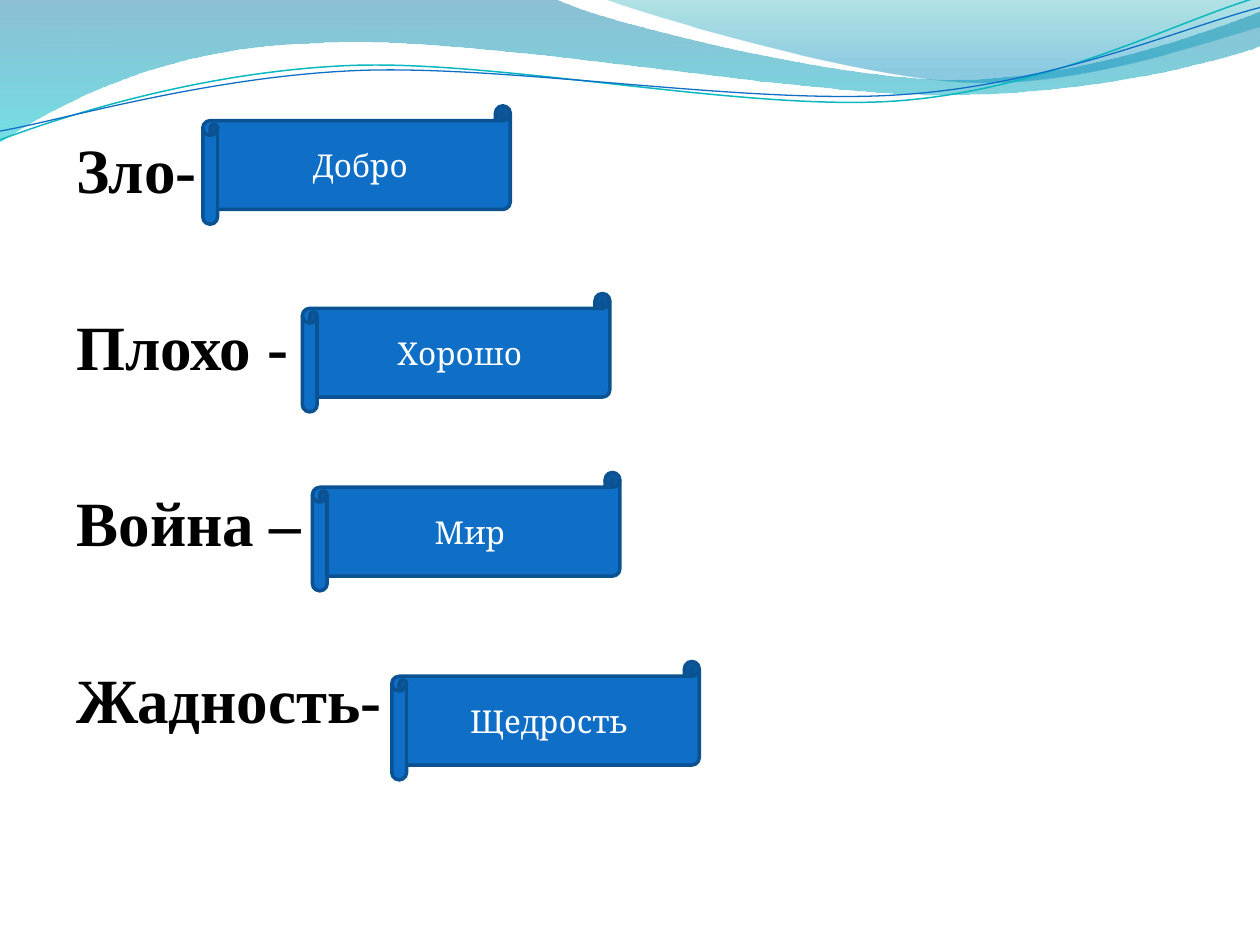
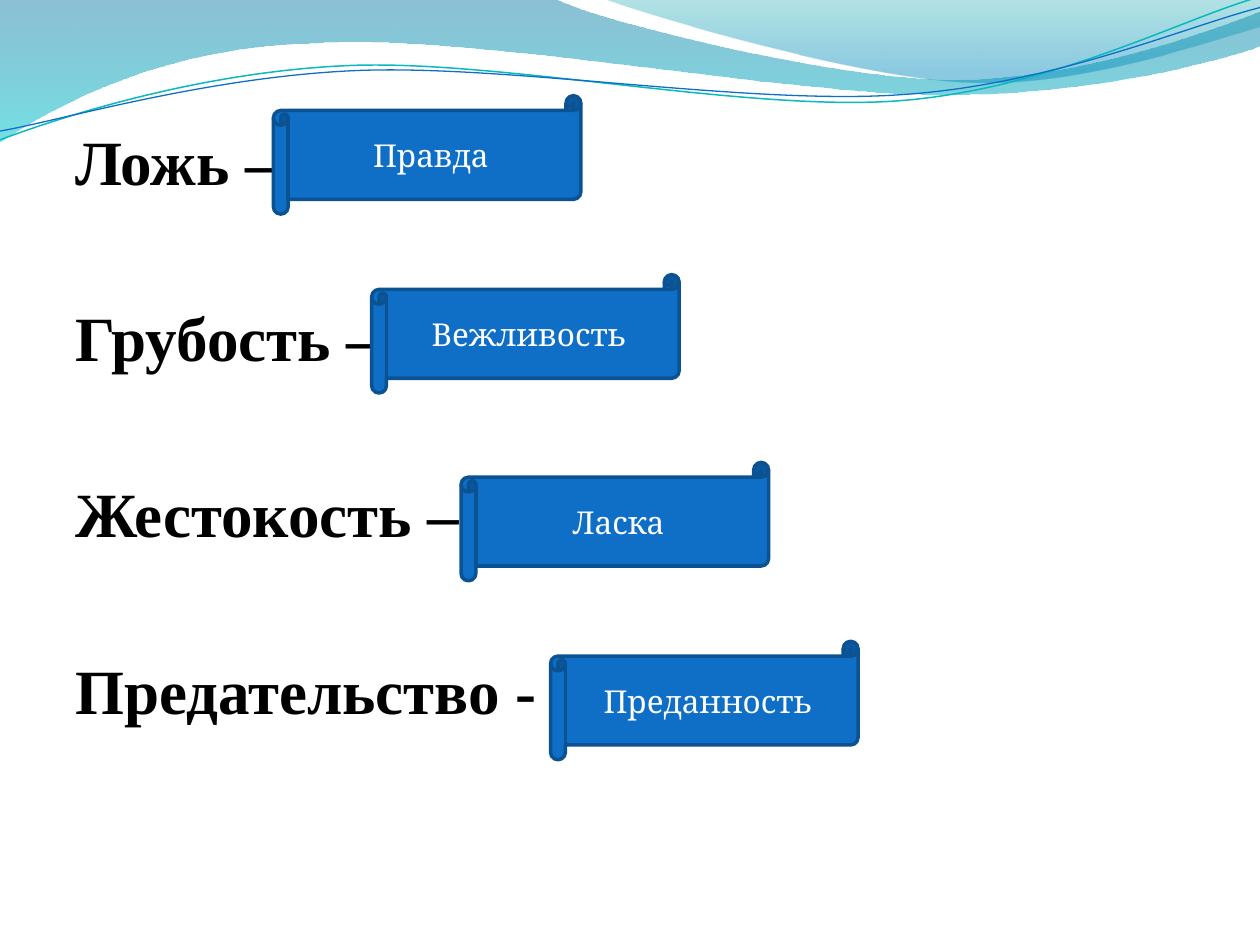
import math

from pptx import Presentation
from pptx import util as u
from pptx.dml.color import RGBColor
from pptx.enum import shapes, text
from pptx.oxml.ns import qn
from lxml import etree

BLUE = RGBColor(0x0F, 0x6F, 0xC6)
DARK_BLUE = RGBColor(0x0B, 0x52, 0x92)
TURQUOISE = RGBColor(0x0A, 0xB8, 0xBF)
WAVE_TOP = RGBColor(0x00, 0x74, 0xA1)
WAVE_BOTTOM = RGBColor(0x00, 0xC6, 0xCF)
CREST_TOP = RGBColor(0x00, 0xA1, 0xA9)
CREST_BOTTOM = RGBColor(0x00, 0x8B, 0xBF)
BLACK = RGBColor(0, 0, 0)
WHITE = RGBColor(255, 255, 255)

# The slide is a grid of square cells, 10 columns by 7.5 rows.
COLUMNS, ROWS = 10, 7.5
SCROLL_SIZE = (2.44, 0.94)
WORD_GAP = 57.6  # points between one word and the next
STRAND_TILT = -2.7  # degrees
STRAND_CENTER = (4.99, 0.58)

# Outlines: a start point, then lines (one point) and curves (three points).
WAVE = [(0, 0), [(4.4, -0.01)],
        [(4.76, 0.17), (6.64, 0.63), (7.58, 0.63)],
        [(8.53, 0.63), (9.58, 0.26), (10, 0.09)],
        [(10.01, 0.36)],
        [(9.83, 0.44), (8.7, 0.76), (7.46, 0.75)],
        [(6.22, 0.75), (3.82, 0.28), (2.57, 0.34)],
        [(1.29, 0.36), (0.46, 0.83), (-0.01, 1.13)]]
CREST = [(4.79, -0.01),
         [(5.09, 0.11), (6.82, 0.62), (7.69, 0.65)],
         [(8.56, 0.69), (9.61, 0.32), (10, 0.21)],
         [(10, 0)]]
UPPER_STRAND = [(0, 1.11),
                [(0.48, 0.93), (1.58, 0.57), (2.77, 0.52)],
                [(3.95, 0.47), (5.93, 0.89), (7.13, 0.8)],
                [(8.33, 0.71), (9.38, 0.15), (9.98, -0.02)]]
LOWER_STRAND = [(0, 1.04),
                [(0.47, 0.96), (1.64, 0.61), (2.83, 0.56)],
                [(4.03, 0.51), (5.97, 0.84), (7.17, 0.75)],
                [(8.36, 0.67), (9.41, 0.21), (10, 0.06)]]

# Each slide: top left and height of the word list, then word, answer, scroll place.
SLIDES = [
    ((0.51, 0.99), 6.51, [
        ("Зло-", "Добро", (1.61, 0.84)),
        ("Плохо -", "Хорошо", (2.4, 2.33)),
        ("Война –", "Мир", (2.48, 3.75)),
        ("Жадность-", "Щедрость", (3.11, 5.25))]),
    ((0.5, 0.92), 6, [
        ("Ложь –", "Правда", (2.17, 0.76)),
        ("Грубость –", "Вежливость", (2.95, 2.18)),
        ("Жестокость –", "Ласка", (3.66, 3.67)),
        ("Предательство -", "Преданность", (4.37, 5.09))]),
]


def level(point):
    """Undo the strand's tilt, which the shape's rotation brings back."""
    angle = math.radians(-STRAND_TILT)
    dx, dy = point[0] - STRAND_CENTER[0], point[1] - STRAND_CENTER[1]
    return (STRAND_CENTER[0] + dx * math.cos(angle) - dy * math.sin(angle),
            STRAND_CENTER[1] + dx * math.sin(angle) + dy * math.cos(angle))


def bend(shape, segments):
    """Merge the straight steps of each three-point segment into one curve."""
    steps = iter(list(shape._element.spPr.iter(qn("a:lnTo"))))
    for segment in segments:
        first, *others = [next(steps) for _ in segment]
        if others:
            first.tag = qn("a:cubicBezTo")
        for step in others:
            first.append(step[0])
            step.getparent().remove(step)


def write(paragraph, words, *, font, size, color, bold=False,
          align=text.PP_ALIGN.LEFT, before=0):
    paragraph.alignment = align
    paragraph.space_before = u.Pt(before)
    run = paragraph.add_run()
    run.text = words
    run.font.name = font
    run.font.size = u.Pt(size)
    run.font.bold = bold
    run.font.color.rgb = color


class Deck:
    def __init__(self):
        self.presentation = Presentation()
        self.presentation.slide_width = u.Inches(COLUMNS)
        self.presentation.slide_height = u.Inches(ROWS)
        self.cell = self.presentation.slide_width / COLUMNS
        self.slide = None

    def cells(self, *lengths):
        return [round(length * self.cell) for length in lengths]

    def new_slide(self):
        self.slide = self.presentation.slides.add_slide(self.presentation.slide_layouts[6])
        self.ribbon(WAVE, [(0, WAVE_TOP, 45), (1, WAVE_BOTTOM, 55)])
        self.ribbon(CREST, [(0, CREST_TOP, 30), (0.8, CREST_BOTTOM, 45)])
        self.strand(UPPER_STRAND, TURQUOISE, 0.85)
        self.strand(LOWER_STRAND, BLUE, 0.75)

    def freeform(self, outline, closed):
        start, *segments = outline
        builder = self.slide.shapes.build_freeform(*self.cells(*start), scale=1.0)
        points = [self.cells(*point) for segment in segments for point in segment]
        builder.add_line_segments(points, close=closed)
        shape = builder.convert_to_shape()
        bend(shape, segments)
        shape.shadow.inherit = False
        return shape

    def ribbon(self, outline, stops):
        """Closed band with a downward gradient of (position, colour, opacity %)."""
        shape = self.freeform(outline, closed=True)
        shape.line.fill.background()
        shape.fill.gradient()
        shape.fill.gradient_angle = 270
        for stop, (position, color, _) in zip(shape.fill.gradient_stops, stops):
            stop.position = position
            stop.color.rgb = color
        colors = shape._element.spPr.iter(qn("a:srgbClr"))
        for element, (_, _, opacity) in zip(list(colors), stops):
            etree.SubElement(element, qn("a:alpha")).set("val", str(opacity * 1000))

    def strand(self, outline, color, width):
        start, *curves = outline
        leveled = [level(start), *([level(point) for point in curve] for curve in curves)]
        shape = self.freeform(leveled, closed=False)
        shape.rotation = STRAND_TILT
        shape.fill.background()
        shape.line.color.rgb = color
        shape.line.width = u.Pt(width)

    def word_list(self, place, height, words):
        box = self.slide.shapes.add_textbox(*self.cells(*place, 9, height))
        frame = box.text_frame
        frame.word_wrap = True
        for index, word in enumerate(words):
            paragraph = frame.add_paragraph() if index else frame.paragraphs[0]
            write(paragraph, word, font="Times New Roman", size=36, color=BLACK,
                  bold=True, before=WORD_GAP if index else 0)

    def scroll(self, place, answer):
        shape = self.slide.shapes.add_shape(
            shapes.MSO_SHAPE.HORIZONTAL_SCROLL, *self.cells(*place, *SCROLL_SIZE))
        shape.shadow.inherit = False
        shape.fill.solid()
        shape.fill.fore_color.rgb = BLUE
        shape.line.color.rgb = DARK_BLUE
        shape.line.width = u.Pt(2)
        shape.text_frame.word_wrap = True
        shape.text_frame.vertical_anchor = text.MSO_ANCHOR.MIDDLE
        write(shape.text_frame.paragraphs[0], answer, font="Cambria", size=18,
              color=WHITE, align=text.PP_ALIGN.CENTER)


def main():
    deck = Deck()
    for place, height, pairs in SLIDES:
        deck.new_slide()
        deck.word_list(place, height, [word for word, _, _ in pairs])
        for _, answer, scroll_place in pairs:
            deck.scroll(scroll_place, answer)
    deck.presentation.save("out.pptx")


if __name__ == "__main__":
    main()
